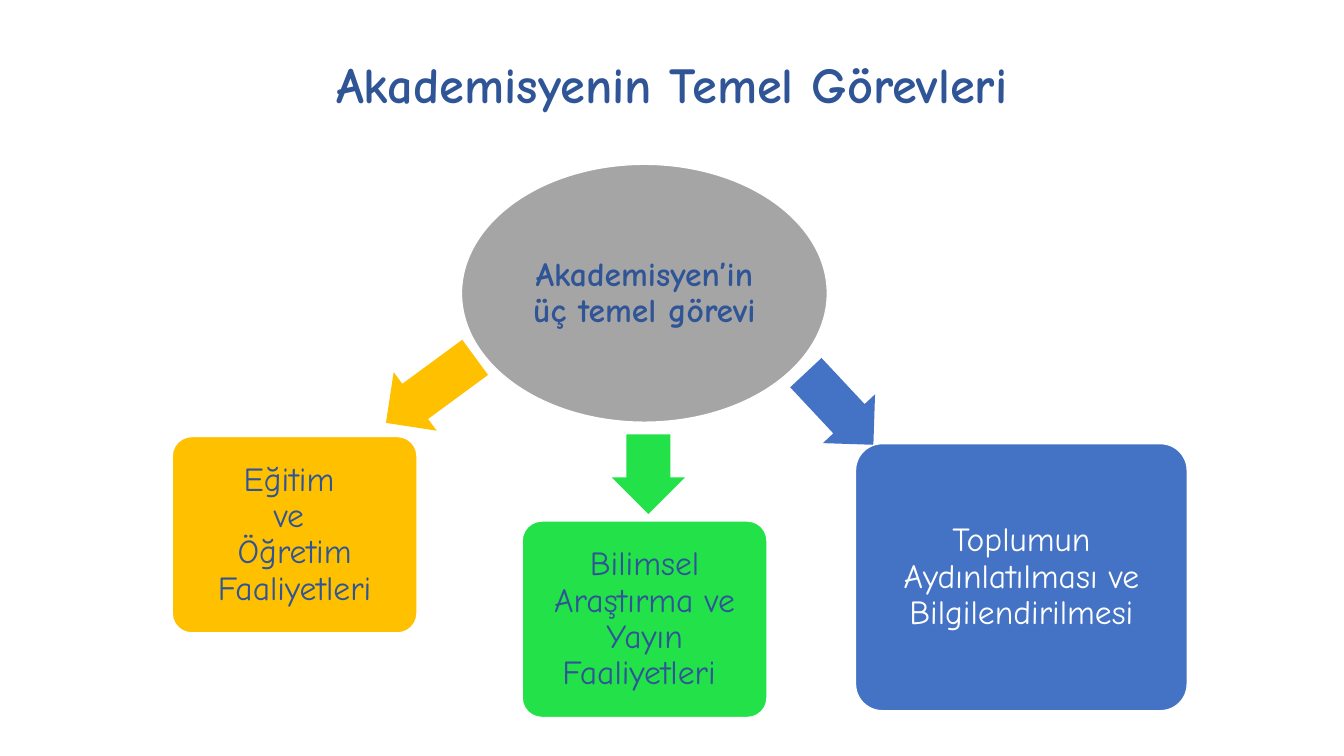
from pptx import Presentation
from pptx.dml.color import RGBColor
from pptx.enum.shapes import MSO_SHAPE
from pptx.enum.text import MSO_ANCHOR, PP_ALIGN
from pptx.util import Cm, Pt

ELLIPSE = MSO_SHAPE.OVAL
ROUNDED = MSO_SHAPE.ROUNDED_RECTANGLE
ARROW = MSO_SHAPE.RIGHT_ARROW
MIDDLE = MSO_ANCHOR.MIDDLE
CENTER = PP_ALIGN.CENTER

FONT = "Comic Neue"
COLORS = {
    "navy": "2F5597",
    "white": "FFFFFF",
    "gray": "A5A5A5",
    "yellow": "FFC000",
    "green": "23E148",
    "blue": "4472C4",
}


def rgb(name):
    """Return the named colour."""
    return RGBColor.from_string(COLORS[name])


def write(sp, lines, size, color, bold=False, spacing=0.9, inset=0.13):
    """Write centred paragraphs into a shape."""
    tf = sp.text_frame
    tf.word_wrap = True
    tf.vertical_anchor = MIDDLE
    tf.margin_left = tf.margin_right = Cm(inset)
    tf.margin_top = tf.margin_bottom = Cm(inset)
    tf.text = "\n".join(lines)
    for p in tf.paragraphs:
        p.alignment = CENTER
        p.line_spacing = spacing
        p.font.name = FONT
        p.font.size = Pt(size)
        p.font.bold = bold
        p.font.color.rgb = rgb(color)


def add_title(s, text):
    """Add the slide title."""
    sp = s.shapes.add_textbox(Cm(2.54), Cm(0.64), Cm(28.78), Cm(3.18))
    write(sp, [text], 36, "navy", bold=True, spacing=Pt(36))


def add_filled(s, kind, left, top, width, height, fill):
    """Add a filled shape with no shadow."""
    sp = s.shapes.add_shape(kind, Cm(left), Cm(top), Cm(width), Cm(height))
    sp.shadow.inherit = False
    sp.fill.solid()
    sp.fill.fore_color.rgb = rgb(fill)
    return sp


def add_node(s, kind, box, fill, lines, color="navy", bold=False, inset=0.13):
    """Add a white-edged diagram node with its text."""
    sp = add_filled(s, kind, *box, fill)
    sp.line.color.rgb = rgb("white")
    sp.line.width = Pt(1)
    if kind == ROUNDED:
        sp.adjustments[0] = 0.1
    write(sp, lines, 24, color, bold, inset=inset)


def add_arrow(s, center, size, angle, fill):
    """Add a block arrow turned about its centre."""
    (x, y), (width, height) = center, size
    sp = add_filled(s, ARROW, x - width / 2, y - height / 2, width, height, fill)
    sp.line.fill.background()
    sp.adjustments[0] = 0.6
    sp.adjustments[1] = 0.5
    sp.rotation = angle


def main():
    """Build the slide."""
    prs = Presentation()
    prs.slide_width, prs.slide_height = Cm(33.87), Cm(19.05)
    s = prs.slides.add_slide(prs.slide_layouts[6])
    add_title(s, "Akademisyenin Temel Görevleri")
    add_node(s, ELLIPSE, (11.63, 4.14, 9.22, 6.5), "gray",
             ["Akademisyen’in üç temel görevi"], bold=True, inset=0.05)
    duties = [
        ("yellow", "navy", (4.34, 11, 6.17, 4.95),
         ["Eğitim ", "ve ", "Öğretim Faaliyetleri"],
         (10.85, 9.83), (2.79, 1.83), 143.7),
        ("green", "navy", (13.16, 13.13, 6.17, 4.95),
         ["Bilimsel Araştırma ve Yayın Faaliyetleri "],
         (16.34, 11.95), (2.01, 1.85), 90),
        ("blue", "white", (21.56, 11.18, 8.36, 6.73),
         ["Toplumun", "Aydınlatılması ve Bilgilendirilmesi"],
         (21.16, 10.3), (2.49, 1.8), 46.9),
    ]
    for fill, color, box, lines, center, size, angle in duties:
        add_arrow(s, center, size, angle, fill)
        add_node(s, ROUNDED, box, fill, lines, color)
    prs.save("out.pptx")


if __name__ == "__main__":
    main()
